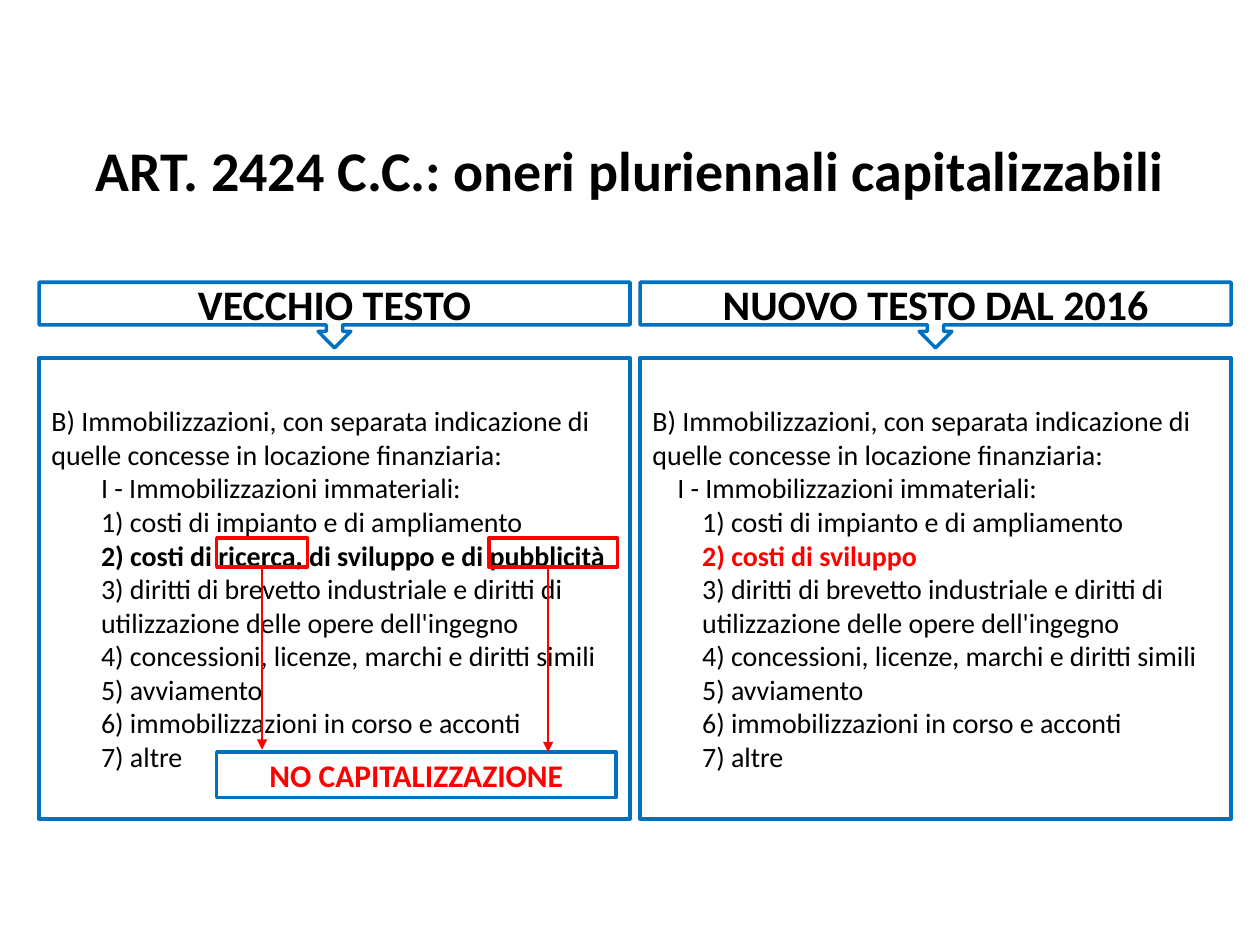
"""Build a slide comparing the old and new text of art. 2424 C.C. on capitalizable costs."""
from lxml.etree import SubElement
from pptx import Presentation
from pptx.dml.color import RGBColor
from pptx.enum.shapes import MSO_CONNECTOR, MSO_SHAPE
from pptx.enum.text import MSO_ANCHOR, PP_ALIGN
from pptx.oxml.ns import qn
from pptx.util import Inches, Pt

THEME = {
    "font": "Calibri",
    "text": RGBColor(0x00, 0x00, 0x00),
    "frame": RGBColor(0x00, 0x70, 0xC0),
    "alert": RGBColor(0xFF, 0x00, 0x00),
    "title": 32, "heading": 24, "verdict": 18, "body": 16,
    "outline": 2, "arrow": 0.75,
}

presentation = Presentation()
presentation.slide_width, presentation.slide_height = Inches(10), Inches(7.5)
COLUMN = presentation.slide_width / 100
ROW = presentation.slide_height / 75
slide = presentation.slides.add_slide(presentation.slide_layouts[5])


def add_frame(kind, left, top, width, height, color):
    frame = slide.shapes.add_shape(
        kind, int(left * COLUMN), int(top * ROW), int(width * COLUMN), int(height * ROW))
    frame.shadow.inherit = False
    frame.fill.background()
    frame.line.color.rgb = THEME[color]
    frame.line.width = Pt(THEME["outline"])
    return frame


def write(paragraph, wording, size, color="text", bold=True, align=PP_ALIGN.CENTER, indent=0):
    paragraph.text = wording
    paragraph.alignment = align
    paragraph._p.get_or_add_pPr().set("marL", str(int(indent * COLUMN)))
    paragraph.font.name = THEME["font"]
    paragraph.font.size = Pt(THEME[size])
    paragraph.font.bold = bold
    paragraph.font.color.rgb = THEME[color]


title = slide.shapes.title
title.left, title.top = 0, int(10.4 * ROW)
title.width, title.height = presentation.slide_width, int(6 * ROW)
title.text_frame.vertical_anchor = MSO_ANCHOR.MIDDLE
write(title.text_frame.paragraphs[0], "ART. 2424 C.C.: oneri pluriennali capitalizzabili", "title")

INTRO = "B) Immobilizzazioni, con separata indicazione di quelle concesse in locazione finanziaria:"
SECTION = "I - Immobilizzazioni immateriali:"
FIRST_ITEM = "1) costi di impianto e di ampliamento"
LATER_ITEMS = [
    "3) diritti di brevetto industriale e diritti di utilizzazione delle opere dell'ingegno",
    "4) concessioni, licenze, marchi e diritti simili",
    "5) avviamento",
    "6) immobilizzazioni in corso e acconti",
    "7) altre",
]
PANEL_WIDTH, ITEM_INDENT = 46.9, 3.94
versions = [
    (3.1, "VECCHIO TESTO", "2) costi di ricerca, di sviluppo e di pubblicità", "text", ITEM_INDENT),
    (50.8, "NUOVO TESTO DAL 2016", "2) costi di sviluppo", "alert", ITEM_INDENT / 2),
]

for left, heading, changed_item, changed_color, section_indent in versions:
    panel = add_frame(MSO_SHAPE.RECTANGLE, left, 28.4, PANEL_WIDTH, 36.6, "frame")
    panel.text_frame.vertical_anchor = MSO_ANCHOR.MIDDLE
    entries = [INTRO, SECTION, FIRST_ITEM, changed_item, *LATER_ITEMS]
    indents = [0, section_indent] + [ITEM_INDENT] * (len(entries) - 2)
    for number, (entry, indent) in enumerate(zip(entries, indents)):
        paragraph = panel.text_frame.add_paragraph() if number else panel.text_frame.paragraphs[0]
        changed = entry == changed_item
        write(paragraph, entry, "body", changed_color if changed else "text",
              changed, PP_ALIGN.LEFT, indent)
    callout = add_frame(MSO_SHAPE.DOWN_ARROW_CALLOUT, left, 22.4, PANEL_WIDTH, 5.2, "frame")
    write(callout.text_frame.paragraphs[0], heading, "heading")

research = add_frame(MSO_SHAPE.RECTANGLE, 17.2, 42.7, 7.2, 2.3, "alert")
add_frame(MSO_SHAPE.RECTANGLE, 38.8, 42.7, 10.2, 2.3, "alert")
verdict = add_frame(MSO_SHAPE.RECTANGLE, 17.2, 59.7, 31.7, 3.6, "frame")
write(verdict.text_frame.paragraphs[0], "NO CAPITALIZZAZIONE", "verdict", "alert")

for column, end_row, source in [(20.8, 59.5, research), (43.5, 59.7, None)]:
    arrow = slide.shapes.add_connector(
        MSO_CONNECTOR.STRAIGHT, int(column * COLUMN), int(45 * ROW),
        int(column * COLUMN), int(end_row * ROW))
    if source:
        arrow.begin_connect(source, 2)
    arrow.line.color.rgb = THEME["alert"]
    arrow.line.width = Pt(THEME["arrow"])
    SubElement(arrow.line._get_or_add_ln(), qn("a:tailEnd"), type="triangle")
    SubElement(arrow._element.spPr, qn("a:effectLst"))

presentation.save("out.pptx")
